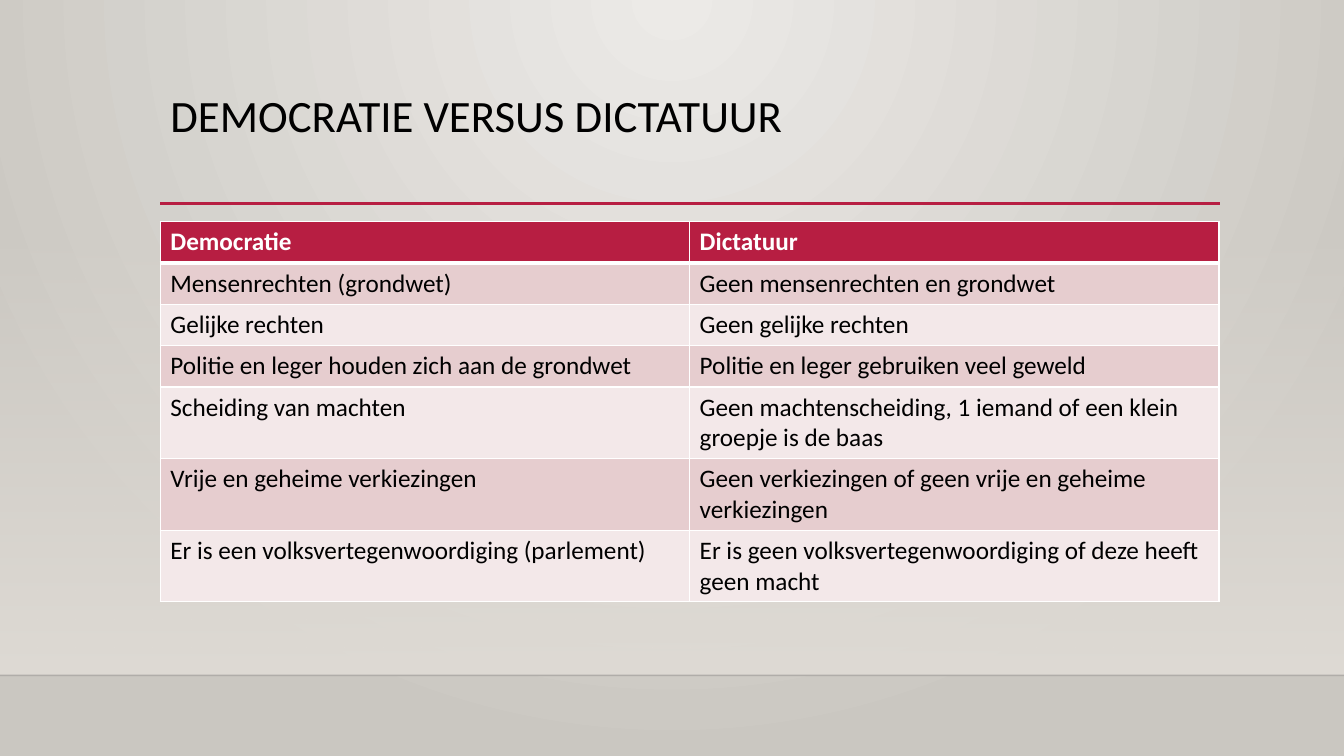
from dataclasses import dataclass

from lxml import etree
from pptx import Presentation
from pptx.dml.color import RGBColor
from pptx.enum.shapes import MSO_CONNECTOR, MSO_SHAPE
from pptx.enum.text import MSO_ANCHOR, PP_ALIGN
from pptx.oxml import parse_xml
from pptx.oxml.ns import nsdecls, qn
from pptx.util import Inches, Pt

STRAIGHT = MSO_CONNECTOR.STRAIGHT
RECTANGLE = MSO_SHAPE.RECTANGLE
TOP = MSO_ANCHOR.TOP
LEFT = PP_ALIGN.LEFT

FONT = "Calibri"
COLORS = {
    "glow": "ECEAE7",
    "edge": "CAC7C1",
    "wall": "DFDBD5",
    "floor": "000001",
    "accent": "B71E42",
    "band_dark": "E6CDCF",
    "band_light": "F3E8E9",
    "text": "000000",
    "white": "FFFFFF",
}
WIDTH, HEIGHT = 13.33, 7.5
MARGIN, CONTENT_WIDTH = 1.59, 10.5
FLOOR_Y, ROW_HEIGHT = 6.7, 0.41


@dataclass(frozen=True)
class Rule:
    left: float
    right: float
    y: float
    color: str
    points: float
    alpha: int = 100


RULES = [
    Rule(0, WIDTH, FLOOR_Y, "floor", 1, 20),
    Rule(MARGIN, 12.1, 2.02, "accent", 2.5),
]

ROWS = [
    ("Democratie", "Dictatuur"),
    ("Mensenrechten (grondwet)", "Geen mensenrechten en grondwet"),
    ("Gelijke rechten", "Geen gelijke rechten"),
    ("Politie en leger houden zich aan de grondwet", "Politie en leger gebruiken veel geweld"),
    ("Scheiding van machten", "Geen machtenscheiding, 1 iemand of een klein groepje is de baas"),
    ("Vrije en geheime verkiezingen", "Geen verkiezingen of geen vrije en geheime verkiezingen"),
    ("Er is een volksvertegenwoordiging (parlement)",
     "Er is geen volksvertegenwoordiging of deze heeft geen macht"),
]


def rgb(name: str) -> RGBColor:
    return RGBColor.from_string(COLORS[name])


def add_run(p, text: str, size: float, color: str, bold: bool = False) -> None:
    r = p.add_run()
    r.text = text
    r.font.name = FONT
    r.font.size = Pt(size)
    r.font.bold = bold
    r.font.color.rgb = rgb(color)


def set_alpha(fill, percent: int) -> None:
    color = fill.find(".//" + qn("a:srgbClr"))
    etree.SubElement(color, qn("a:alpha")).set("val", str(percent * 1000))


def set_background(s) -> None:
    """Give the slide a radial glow from the top centre."""
    s.background.fill.solid()
    bg_pr = s.background._cSld.bg.bgPr
    bg_pr.replace(bg_pr[0], parse_xml(
        f'<a:gradFill {nsdecls("a")} rotWithShape="1"><a:gsLst>'
        f'<a:gs pos="0"><a:srgbClr val="{COLORS["glow"]}"/></a:gs>'
        f'<a:gs pos="100000"><a:srgbClr val="{COLORS["edge"]}"/></a:gs></a:gsLst>'
        '<a:path path="circle"><a:fillToRect l="43000" t="0" r="43000" b="100000"/>'
        '</a:path></a:gradFill>'))


def add_wall(s) -> None:
    """Add the band that fades in towards the floor line."""
    sp = s.shapes.add_shape(RECTANGLE, 0, Inches(2.21), Inches(WIDTH), Inches(FLOOR_Y - 2.21))
    sp.shadow.inherit = False
    sp.line.fill.background()
    sp.fill.gradient()
    sp.fill.gradient_angle = 270
    for stop, position in zip(sp.fill.gradient_stops, (0, 1)):
        stop.position = position
        stop.color.rgb = rgb("wall")
    set_alpha(sp._element.spPr.find(qn("a:gradFill")), 0)


def add_rule(s, rule: Rule) -> None:
    y = Inches(rule.y)
    sp = s.shapes.add_connector(STRAIGHT, Inches(rule.left), y, Inches(rule.right), y)
    sp.line.color.rgb = rgb(rule.color)
    sp.line.width = Pt(rule.points)
    sp_pr = sp._element.spPr
    if rule.alpha < 100:
        set_alpha(sp_pr, rule.alpha)
    etree.SubElement(sp_pr, qn("a:effectLst"))


def format_title(s, text: str) -> None:
    sp = s.shapes.title
    s.shapes._spTree.append(sp._element)
    sp.left, sp.top = Inches(MARGIN), Inches(0.88)
    sp.width, sp.height = Inches(CONTENT_WIDTH), Inches(1.15)
    tf = sp.text_frame
    tf.word_wrap = True
    tf.vertical_anchor = TOP
    p = tf.paragraphs[0]
    p.alignment = LEFT
    p.line_spacing = 0.9
    add_run(p, text, 32, "text")


def set_borders(cell, top: float, bottom: float) -> None:
    tc_pr = cell._tc.get_or_add_tcPr()
    for side, points in (("L", 1), ("R", 1), ("T", top), ("B", bottom)):
        tc_pr.append(parse_xml(
            f'<a:ln{side} {nsdecls("a")} w="{Pt(points)}"><a:solidFill>'
            f'<a:srgbClr val="{COLORS["white"]}"/></a:solidFill></a:ln{side}>'))


def add_comparison(s) -> None:
    table = s.shapes.add_table(
        len(ROWS), len(ROWS[0]), Inches(MARGIN), Inches(2.2),
        Inches(CONTENT_WIDTH), Inches(ROW_HEIGHT * len(ROWS))).table
    table.horz_banding = False
    for i, texts in enumerate(ROWS):
        table.rows[i].height = Inches(ROW_HEIGHT)
        header = i == 0
        band = "accent" if header else "band_dark" if i % 2 else "band_light"
        for j, text in enumerate(texts):
            cell = table.cell(i, j)
            set_borders(cell, top=3 if i == 1 else 1, bottom=3 if header else 1)
            cell.fill.solid()
            cell.fill.fore_color.rgb = rgb(band)
            add_run(cell.text_frame.paragraphs[0], text, 18,
                    "white" if header else "text", header)


def main() -> None:
    prs = Presentation()
    prs.slide_width, prs.slide_height = Inches(WIDTH), Inches(HEIGHT)
    s = prs.slides.add_slide(prs.slide_layouts.get_by_name("Title Only"))
    set_background(s)
    add_wall(s)
    for rule in RULES:
        add_rule(s, rule)
    format_title(s, "DEMOCRATIE VERSUS DICTATUUR")
    add_comparison(s)
    prs.save("out.pptx")


if __name__ == "__main__":
    main()
